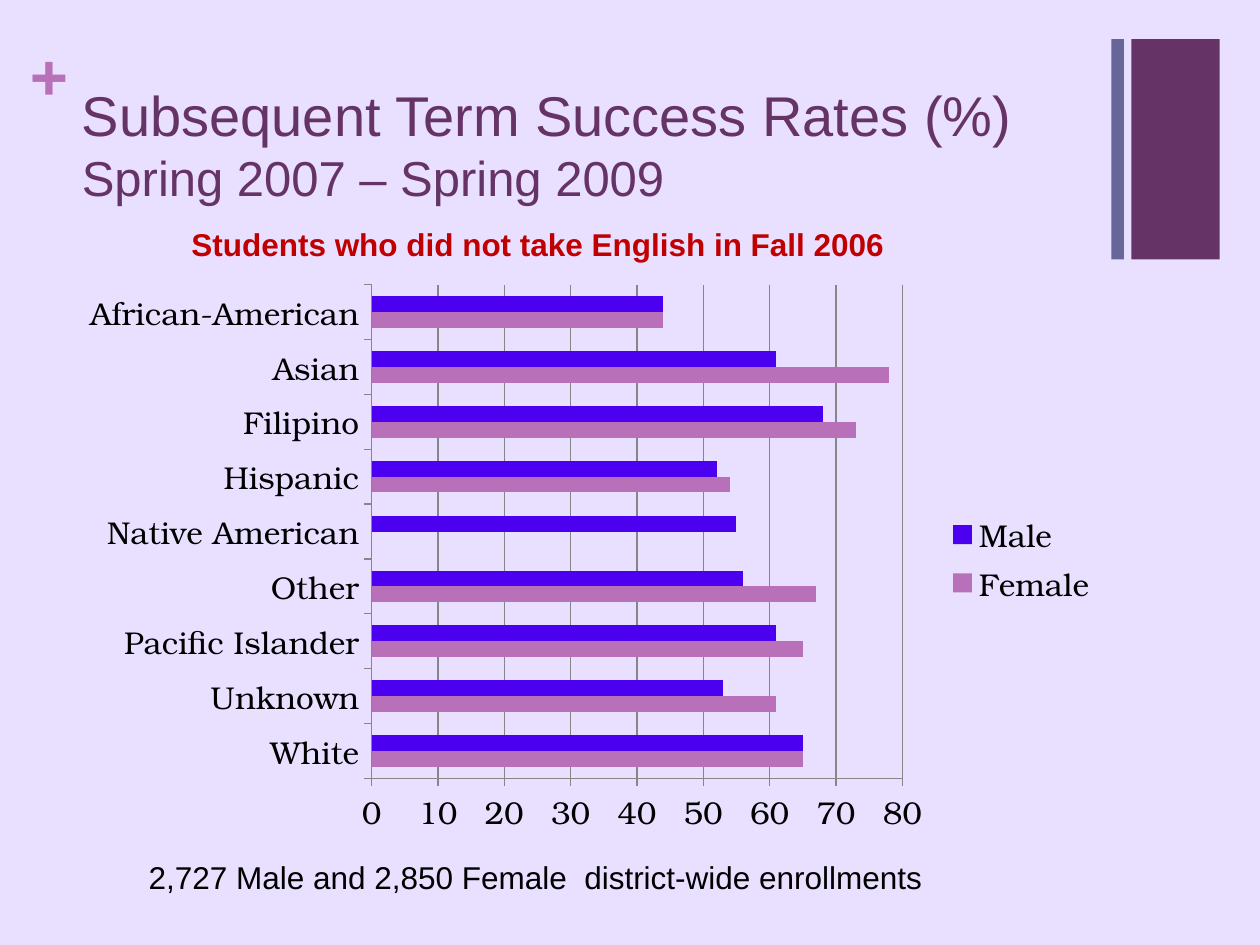
from pptx import Presentation
from pptx.chart.data import CategoryChartData as ChartData
from pptx.dml.color import RGBColor
from pptx.enum.chart import XL_CHART_TYPE as Kind, XL_LEGEND_POSITION as Side
from pptx.enum.chart import XL_TICK_MARK as Tick
from pptx.enum.shapes import MSO_SHAPE as Shape
from pptx.enum.text import MSO_ANCHOR as Anchor, PP_ALIGN as Align
from pptx.util import Inches, Pt

LILAC = RGBColor(0xE9, 0xDF, 0xFF)
PLUM = RGBColor(0x66, 0x33, 0x66)
SLATE = RGBColor(0x66, 0x66, 0x99)
PINK = RGBColor(0xB8, 0x70, 0xB8)
BLUE = RGBColor(0x4B, 0x00, 0xEF)
RED = RGBColor(0xC0, 0x00, 0x00)
GREY = RGBColor(0x86, 0x86, 0x86)
BLACK = RGBColor(0, 0, 0)
SANS, SERIF = "Arial", "TeX Gyre Bonum"

GROUPS = ["White", "Unknown", "Pacific Islander", "Other", "Native American",
          "Hispanic", "Filipino", "Asian", "African-American"]
RATES = [("Female", PINK, [65, 61, 65, 67, 0, 54, 73, 78, 44]),
         ("Male", BLUE, [65, 53, 61, 56, 55, 52, 68, 61, 44])]


def style(font, name, size, color, bold=False):
    font.name, font.size, font.bold = name, Pt(size), bold
    font.color.rgb = color


def add_bar(slide, left, width, color):
    bar = slide.shapes.add_shape(Shape.RECTANGLE, Inches(left), Inches(0.31),
                                 Inches(width), Inches(1.75))
    bar.shadow.inherit = False
    bar.fill.solid()
    bar.fill.fore_color.rgb = color
    bar.line.fill.background()


def add_text(slide, text, box, name, size, color, bold=False, align=Align.CENTER):
    frame = slide.shapes.add_textbox(*map(Inches, box)).text_frame
    frame.word_wrap = True
    para = frame.paragraphs[0]
    para.text, para.alignment = text, align
    style(para.font, name, size, color, bold)
    return frame


def set_title(slide, lines):
    title = slide.shapes.title
    title.left, title.top = Inches(0.55), Inches(0.53)
    title.width, title.height = Inches(8.26), Inches(1.22)
    frame = title.text_frame
    frame.vertical_anchor = Anchor.MIDDLE
    para = frame.paragraphs[0]
    para.alignment = Align.LEFT
    for i, (text, size) in enumerate(lines):
        if i:
            para.add_line_break()
        run = para.add_run()
        run.text = text
        style(run.font, SANS, size, PLUM)


def set_line(line):
    line.color.rgb, line.width = GREY, Pt(0.75)


def add_rates(slide):
    data = ChartData(number_format="0")
    data.categories = GROUPS
    for name, _, vals in RATES:
        data.add_series(name, vals)
    chart = slide.shapes.add_chart(Kind.BAR_CLUSTERED, Inches(0.55), Inches(2.17),
                                   Inches(8.26), Inches(4.53), data).chart
    style(chart.font, SERIF, 18, BLACK)
    chart.has_title = False
    chart.has_legend = True
    chart.legend.position = Side.RIGHT
    chart.legend.include_in_layout = False

    # Bars
    plot = chart.plots[0]
    plot.vary_by_categories, plot.gap_width, plot.overlap = False, 150, 0
    for series, (_, color, _) in zip(plot.series, RATES):
        series.format.fill.solid()
        series.format.fill.fore_color.rgb = color

    # Axes
    for axis in (chart.category_axis, chart.value_axis):
        axis.major_tick_mark = Tick.OUTSIDE
        axis.minor_tick_mark = Tick.NONE
        set_line(axis.format.line)
    scale = chart.value_axis
    scale.minimum_scale, scale.maximum_scale, scale.major_unit = 0, 80, 10
    scale.has_major_gridlines = True
    set_line(scale.major_gridlines.format.line)


def main():
    deck = Presentation()
    deck.slide_width, deck.slide_height = Inches(10), Inches(7.5)
    slide = deck.slides.add_slide(deck.slide_layouts[5])
    slide.background.fill.solid()
    slide.background.fill.fore_color.rgb = LILAC

    # Corner decoration
    add_bar(slide, 8.98, 0.7, PLUM)
    plus = add_text(slide, "+", (0.24, 0.25, 0.29, 0.61), SERIF, 36, PINK, True,
                    Align.LEFT)
    plus.margin_left = plus.margin_right = plus.margin_top = plus.margin_bottom = 0
    add_bar(slide, 8.82, 0.1, SLATE)

    # Title, chart and captions
    set_title(slide, [("Subsequent Term Success Rates (%)", 32),
                      ("Spring 2007 – Spring 2009", 28)])
    add_rates(slide)
    add_text(slide, "Students who did not take English in Fall 2006",
             (0, 1.74, 8.54, 0.4), SANS, 18, RED, True)
    add_text(slide, "2,727 Male and 2,850 Female  district-wide enrollments",
             (-0.02, 6.76, 8.54, 0.4), SANS, 18, BLACK)
    deck.save("out.pptx")


if __name__ == "__main__":
    main()
